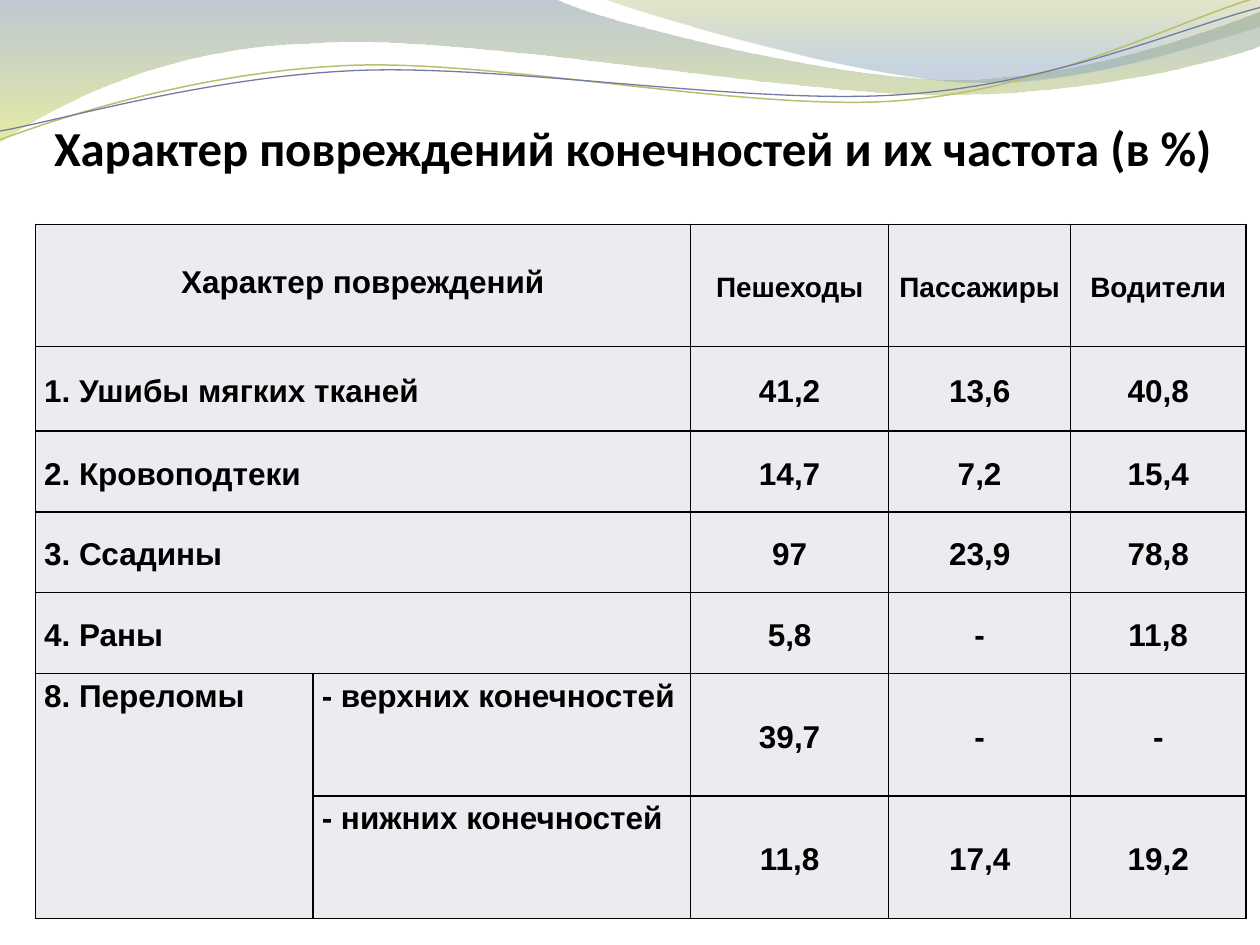
from dataclasses import dataclass

import pptx
import pptx.dml.color
import pptx.enum.text
import pptx.oxml
import pptx.oxml.ns
import pptx.util
from lxml import etree

Inches = pptx.util.Inches
Pt = pptx.util.Pt
Align = pptx.enum.text.PP_ALIGN
Anchor = pptx.enum.text.MSO_ANCHOR
qn = pptx.oxml.ns.qn


@dataclass(frozen=True)
class Theme:
    ink: str = "000000"
    cell: str = "EBECF0"
    olive: str = "B9C06C"
    violet: str = "727CA3"
    title_font: str = "Calibri"
    table_font: str = "Arial"
    title_size: float = 27.9
    body_size: int = 18
    header_size: int = 16


THEME = Theme()

LARGE_WAVE = [
    (0, 0), (4.4, -0.01),
    (4.76, 0.17, 6.64, 0.63, 7.58, 0.63),
    (8.53, 0.63, 9.58, 0.26, 10, 0.09), (10.01, 0.36),
    (9.83, 0.44, 8.7, 0.76, 7.46, 0.75),
    (6.22, 0.75, 3.82, 0.28, 2.57, 0.34),
    (1.29, 0.36, 0.46, 0.83, -0.01, 1.13), (0, 0),
]
SMALL_WAVE = [
    (4.79, -0.01),
    (5.09, 0.11, 6.82, 0.62, 7.69, 0.65),
    (8.56, 0.69, 9.61, 0.32, 10, 0.21), (10, 0), (4.79, -0.01),
]
OLIVE_LINE = [
    (0, 1.11),
    (0.48, 0.93, 1.58, 0.57, 2.77, 0.52),
    (3.95, 0.47, 5.93, 0.89, 7.13, 0.8),
    (8.33, 0.71, 9.38, 0.15, 9.98, -0.02),
]
VIOLET_LINE = [
    (0, 1.04),
    (0.47, 0.96, 1.64, 0.61, 2.83, 0.56),
    (4.03, 0.51, 5.97, 0.84, 7.17, 0.75),
    (8.36, 0.67, 9.41, 0.21, 10, 0.06),
]

COLUMN_WIDTHS = [2.2, 2.99, 1.57, 1.44, 1.39]
ROW_HEIGHTS = [0.97, 0.67, 0.64, 0.64, 0.64, 0.97, 0.97]
INJURIES = [
    ["Характер повреждений", "", "Пешеходы", "Пассажиры", "Водители"],
    ["1. Ушибы мягких тканей", "", "41,2", "13,6", "40,8"],
    ["2. Кровоподтеки", "", "14,7", "7,2", "15,4"],
    ["3. Ссадины", "", "97", "23,9", "78,8"],
    ["4. Раны", "", "5,8", "-", "11,8"],
    ["8. Переломы", "- верхних конечностей", "39,7", "-", "-"],
    ["", "- нижних конечностей", "11,8", "17,4", "19,2"],
]
FRACTURE_ROW = 5


def rgb(value):
    return pptx.dml.color.RGBColor.from_string(value)


def bend_segments(shape, segments, left, top):
    lines = list(shape.element.spPr.iter(qn("a:lnTo")))
    for line, segment in zip(lines, segments[1:]):
        if len(segment) == 2:
            continue
        curve = etree.Element(qn("a:cubicBezTo"))
        for x, y in zip(segment[::2], segment[1::2]):
            etree.SubElement(curve, qn("a:pt"), x=str(Inches(left + x) - shape.left),
                             y=str(Inches(top + y) - shape.top))
        line.getparent().replace(line, curve)


def add_outline(slide, segments, left, top, close):
    points = [(Inches(left + segment[-2]), Inches(top + segment[-1]))
              for segment in segments]
    builder = slide.shapes.build_freeform(*points[0])
    builder.add_line_segments(points[1:], close=close)
    shape = builder.convert_to_shape()
    bend_segments(shape, segments, left, top)
    shape.shadow.inherit = False
    return shape


def add_wave(slide, segments, left, top, stops):
    shape = add_outline(slide, segments, left, top, True)
    shape.line.fill.background()
    shape.fill.gradient()
    shape.fill.gradient_angle = 270
    for stop, (position, color, _) in zip(shape.fill.gradient_stops, stops):
        stop.position = position
        stop.color.rgb = rgb(color)
    colors = shape.element.spPr.iter(qn("a:srgbClr"))
    for color, (_, _, opacity) in zip(list(colors), stops):
        etree.SubElement(color, qn("a:alpha"), val=str(opacity * 1000))


def add_curve(slide, segments, left, top, color, width):
    shape = add_outline(slide, segments, left, top, False)
    shape.fill.background()
    shape.line.color.rgb = rgb(color)
    shape.line.width = Pt(width)


def add_wave_header(slide, left, top):
    add_wave(slide, LARGE_WAVE, left, top, [(0, "72889B", 45), (1, "D3DE57", 55)])
    add_wave(slide, SMALL_WAVE, left, top, [(0, "A4AC50", 30), (0.8, "84A3BD", 45)])
    add_curve(slide, OLIVE_LINE, left, top, THEME.olive, 0.85)
    add_curve(slide, VIOLET_LINE, left, top, THEME.violet, 0.75)


def add_run(paragraph, text, font, size):
    run = paragraph.add_run()
    run.text = text
    run.font.name = font
    run.font.size = Pt(size)
    run.font.bold = True
    run.font.color.rgb = rgb(THEME.ink)


def add_title(slide, left, top, width, height):
    box = slide.shapes.add_textbox(Inches(left), Inches(top), Inches(width), Inches(height))
    frame = box.text_frame
    frame.word_wrap = True
    frame.vertical_anchor = Anchor.BOTTOM
    frame.margin_left = frame.margin_right = 0
    frame.margin_top = Inches(0.05)
    frame.margin_bottom = Inches(0.3)
    add_run(frame.paragraphs[0], "Характер повреждений конечностей и их частота (в %)",
            THEME.title_font, THEME.title_size)


def add_borders(cell):
    properties = cell._tc.get_or_add_tcPr()
    for index, side in enumerate(("lnL", "lnR", "lnT", "lnB")):
        border = etree.Element(qn("a:" + side), w=str(Pt(1)))
        fill = etree.SubElement(border, qn("a:solidFill"))
        etree.SubElement(fill, qn("a:srgbClr"), val=THEME.ink)
        properties.insert(index, border)


def fill_cell(cell, text, row, column):
    is_label = column < 2
    is_heading = is_label and row == 0
    cell.fill.solid()
    cell.fill.fore_color.rgb = rgb(THEME.cell)
    cell.margin_left = cell.margin_right = Inches(0.07)
    cell.margin_top = Inches(0.28 if is_heading else 0)
    cell.margin_bottom = 0
    at_top = is_heading or is_label and row >= FRACTURE_ROW
    cell.vertical_anchor = Anchor.TOP if at_top else Anchor.MIDDLE
    add_borders(cell)
    if text:
        paragraph = cell.text_frame.paragraphs[0]
        paragraph.alignment = Align.LEFT if is_label and row else Align.CENTER
        paragraph.line_spacing = 1.15
        size = THEME.body_size if row or is_label else THEME.header_size
        add_run(paragraph, text, THEME.table_font, size)


def add_injury_table(slide, left, top, width, height):
    frame = slide.shapes.add_table(len(ROW_HEIGHTS), len(COLUMN_WIDTHS), Inches(left),
                                   Inches(top), Inches(width), Inches(height))
    table = frame.table
    for column, share in zip(table.columns, COLUMN_WIDTHS):
        column.width = Inches(width * share / sum(COLUMN_WIDTHS))
    for row, share in zip(table.rows, ROW_HEIGHTS):
        row.height = Inches(height * share / sum(ROW_HEIGHTS))
    for row in range(FRACTURE_ROW):
        table.cell(row, 0).merge(table.cell(row, 1))
    table.cell(FRACTURE_ROW, 0).merge(table.cell(FRACTURE_ROW + 1, 0))
    for row, texts in enumerate(INJURIES):
        for column, text in enumerate(texts):
            fill_cell(table.cell(row, column), text, row, column)


def main():
    presentation = pptx.Presentation()
    presentation.slide_width = Inches(10)
    presentation.slide_height = Inches(7.5)
    slide = presentation.slides.add_slide(presentation.slide_layouts[6])
    add_wave_header(slide, 0, 0)
    add_title(slide, 0.43, 0.77, 9.37, 0.93)
    add_injury_table(slide, 0.28, 1.78, 9.61, 5.51)
    presentation.save("out.pptx")


if __name__ == "__main__":
    main()
